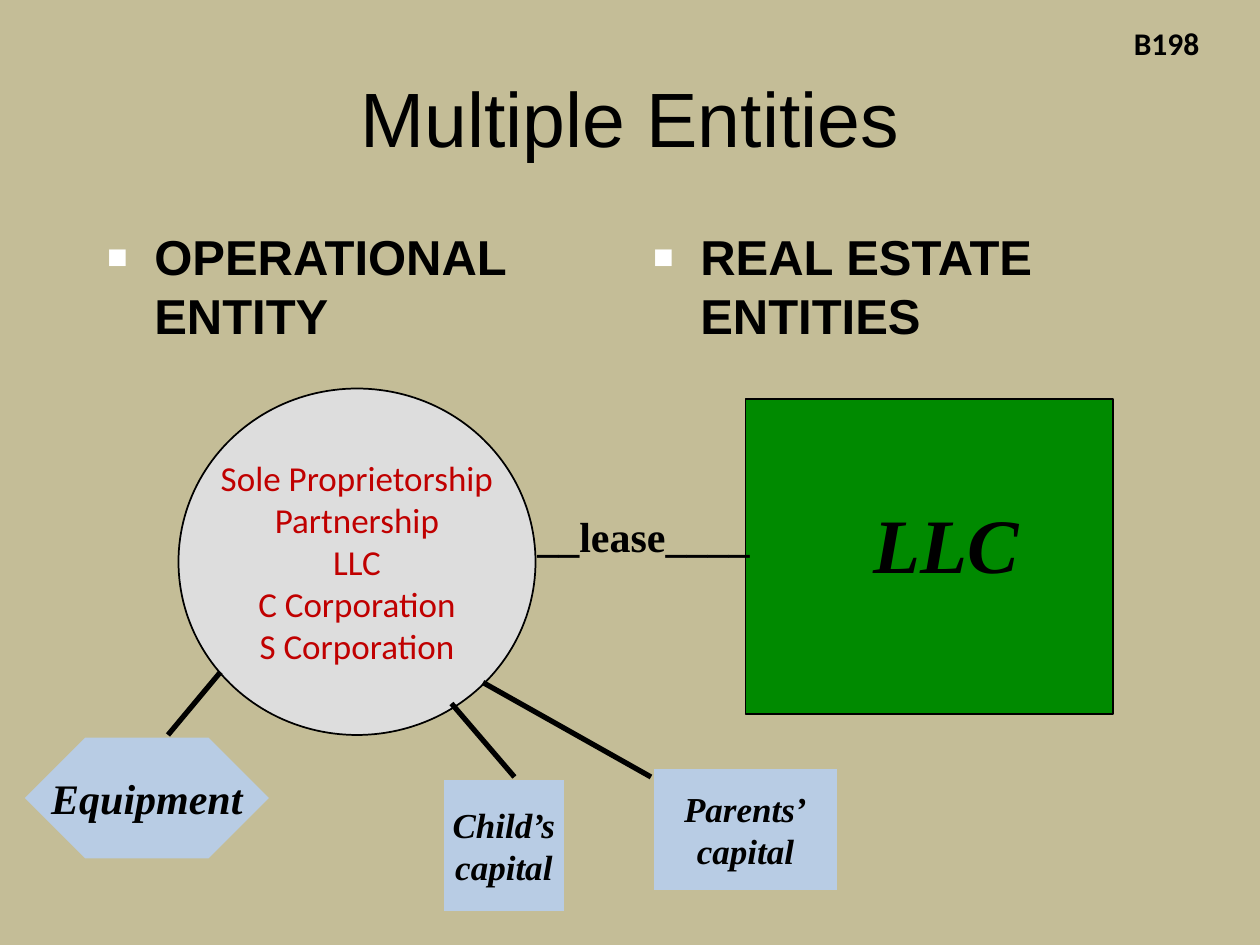
from lxml import etree
from pptx import Presentation
from pptx.dml.color import RGBColor
from pptx.enum.shapes import MSO_CONNECTOR, MSO_SHAPE
from pptx.enum.text import MSO_ANCHOR, MSO_AUTO_SIZE, PP_ALIGN
from pptx.oxml.ns import qn
from pptx.util import Inches, Pt

LINE = MSO_CONNECTOR.STRAIGHT
OVAL, RECT, HEX = MSO_SHAPE.OVAL, MSO_SHAPE.RECTANGLE, MSO_SHAPE.HEXAGON
LEFT, MID = PP_ALIGN.LEFT, PP_ALIGN.CENTER
TOP, CORE = MSO_ANCHOR.TOP, MSO_ANCHOR.MIDDLE
GROW = MSO_AUTO_SIZE.SHAPE_TO_FIT_TEXT
SANS, BODY, SERIF = "Arial", "Calibri", "Times New Roman"

BLACK = RGBColor(0x00, 0x00, 0x00)
TAN = RGBColor(0xC4, 0xBD, 0x97)
GREY = RGBColor(0xDD, 0xDD, 0xDD)
RED = RGBColor(0xC0, 0x00, 0x00)
GREEN = RGBColor(0x00, 0x8A, 0x00)
BLUE = RGBColor(0xB8, 0xCC, 0xE4)

COLS, ROWS = 120, 90
WIDE, HIGH = Inches(10), Inches(7.5)


def grid(col, row):
    return round(WIDE * col / COLS), round(HIGH * row / ROWS)


def span(box):
    return grid(*box[:2]) + grid(*box[2:])


def move(shape, box):
    shape.left, shape.top, shape.width, shape.height = span(box)


def write(shape, lines, size, face, color=BLACK, bold=False, slant=False,
          align=MID, anchor=CORE, wrap=False):
    frame = shape.text_frame
    frame.text = "\n".join(lines)
    frame.word_wrap = wrap
    frame.vertical_anchor = anchor
    for para in frame.paragraphs:
        para.alignment = align
        font = para.font
        font.size, font.name = Pt(size), face
        font.bold, font.italic = bold, slant
        font.color.rgb = color


def bullet(para):
    props = para._p.get_or_add_pPr()
    indent = Inches(0.375)
    props.set("marL", str(indent))
    props.set("indent", str(-indent))
    color = etree.SubElement(props, qn("a:buClr"))
    etree.SubElement(color, qn("a:srgbClr"), val="FFFFFF")
    etree.SubElement(props, qn("a:buSzPct"), val="70000")
    etree.SubElement(props, qn("a:buFont"), typeface=SANS)
    etree.SubElement(props, qn("a:buChar"), char="■")


def head(holder, box, text):
    move(holder, box)
    write(holder, [text], 44, SANS, wrap=True)


def topic(holder, box, text):
    move(holder, box)
    holder.text_frame.text = text
    para = holder.text_frame.paragraphs[0]
    para.space_before = Pt(5.6)
    bullet(para)
    para.alignment = LEFT
    para.font.size, para.font.name, para.font.bold = Pt(28), SANS, True
    para.font.color.rgb = BLACK
    holder.text_frame.vertical_anchor = TOP


def block(slide, kind, box, fill, edge, width):
    shape = slide.shapes.add_shape(kind, *span(box))
    shape.shadow.inherit = False
    shape.fill.solid()
    shape.fill.fore_color.rgb = fill
    shape.line.color.rgb = edge
    shape.line.width = Pt(width)
    return shape


def label(slide, box, text, size, face, slant=False, wrap=False, before=0):
    shape = slide.shapes.add_textbox(*span(box))
    write(shape, [text], size, face, bold=True, slant=slant,
          align=LEFT, anchor=TOP, wrap=wrap)
    shape.text_frame.auto_size = GROW
    if before:
        shape.text_frame.paragraphs[0].space_before = Pt(before)


def asset(slide, kind, box, lines, size, start, end):
    shape = block(slide, kind, box, BLUE, TAN, 3)
    if kind == HEX:
        shape.adjustments[0] = 0.5
    write(shape, lines, size, SERIF, bold=True, slant=True)
    line = slide.shapes.add_connector(LINE, *grid(*start), *grid(*end))
    line.line.color.rgb = BLACK
    line.line.width = Pt(3)
    etree.SubElement(line._element.spPr, qn("a:effectLst"))


def main():
    deck = Presentation()
    deck.slide_width, deck.slide_height = WIDE, HIGH
    slide = deck.slides.add_slide(deck.slide_layouts[3])
    slide.background.fill.solid()
    slide.background.fill.fore_color.rgb = TAN

    title, left, right = list(slide.placeholders)[:3]
    head(title, (6, 3.6, 108, 15), "Multiple Entities")
    topic(left, (9, 21, 50, 54), "OPERATIONAL ENTITY")
    topic(right, (61, 21, 50, 59), "REAL ESTATE ENTITIES")
    for spare in list(slide.placeholders)[3:]:
        spare._element.getparent().remove(spare._element)

    forms = block(slide, OVAL, (17, 37, 34, 33), GREY, BLACK, 1)
    write(forms, ["Sole Proprietorship", "Partnership", "LLC",
                  "C Corporation", "S Corporation"], 20, BODY, RED)
    block(slide, RECT, (71, 38, 35, 30), GREEN, BLACK, 1)
    label(slide, (50, 48, 24, 6), "__lease____", 24, SERIF,
          wrap=True, before=12)

    asset(slide, RECT, (62, 73, 18, 12), ["Parents’", "capital"], 20,
          (46, 65), (62, 74))
    asset(slide, RECT, (42, 74, 12, 13), ["Child’s", "capital"], 20,
          (43, 67), (49, 74))
    asset(slide, HEX, (2, 70, 24, 12), ["Equipment"], 24,
          (16, 70), (21, 64))

    label(slide, (82, 46.7, 16.3, 10), "LLC", 44, SERIF, slant=True)
    label(slide, (106.8, 1.7, 8.8, 4.8), "B198", 18, BODY)
    deck.save("out.pptx")


if __name__ == "__main__":
    main()
